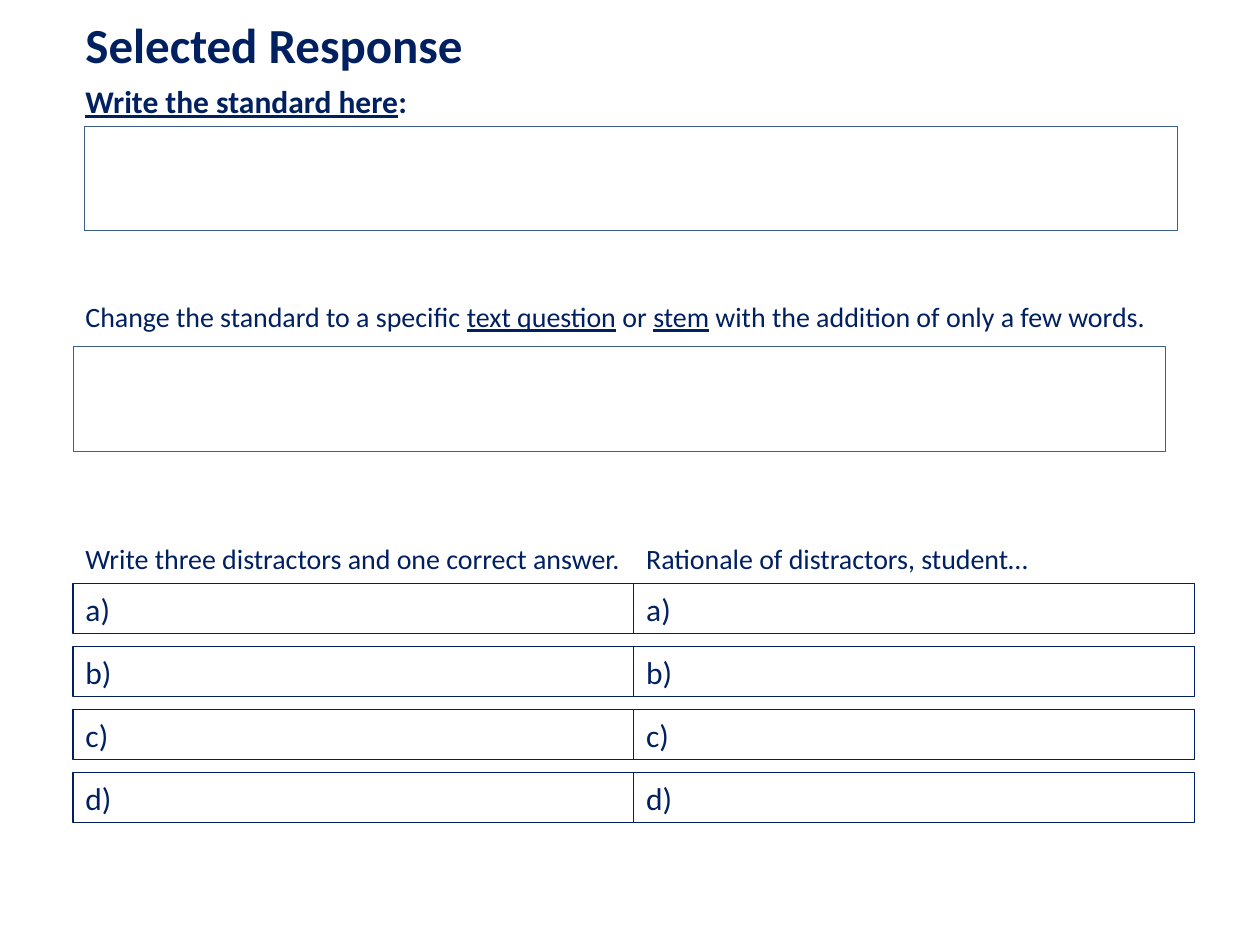
from dataclasses import dataclass

from pptx import Presentation, util as u
from pptx.dml import color
from pptx.enum import dml, shapes, text


@dataclass(frozen=True)
class Theme:
    """Colours, font and type sizes of the worksheet."""
    navy: color.RGBColor = color.RGBColor(0x00, 0x20, 0x60)
    blue: color.RGBColor = color.RGBColor(0x3A, 0x5F, 0x8C)
    font: str = "Calibri"
    title: int = 28
    label: int = 18
    body: int = 16


THEME = Theme()


def write_text(shape, *parts, size=THEME.body, bold=False, underlined=()):
    """Write one left-aligned paragraph, underlining the named parts."""
    frame = shape.text_frame
    frame.word_wrap = True
    frame.vertical_anchor = text.MSO_ANCHOR.TOP
    paragraph = frame.paragraphs[0]
    paragraph.alignment = text.PP_ALIGN.LEFT
    for part in parts:
        run = paragraph.add_run()
        run.text = part
        run.font.name = THEME.font
        run.font.size = u.Pt(size)
        run.font.bold = bold
        run.font.underline = part in underlined
        run.font.color.rgb = THEME.navy


def add_label(slide, left, top, width, height, *parts, **formatting):
    """Add a text label in the given box."""
    shape = slide.shapes.add_textbox(*map(u.Inches, (left, top, width, height)))
    write_text(shape, *parts, **formatting)


def add_frame(slide, left, top, width, height, line_color, line_width, dash=None):
    """Add an unfilled outlined rectangle and return it."""
    box = map(u.Inches, (left, top, width, height))
    shape = slide.shapes.add_shape(shapes.MSO_SHAPE.RECTANGLE, *box)
    shape.shadow.inherit = False
    shape.fill.background()
    shape.line.color.rgb = line_color
    shape.line.width = u.Pt(line_width)
    if dash is not None:
        shape.line.dash_style = dash
    return shape


def add_writing_area(slide, left, top, width, height):
    """Add a blank dotted area to write in."""
    add_frame(slide, left, top, width, height, THEME.blue, 0.25, dml.MSO_LINE.ROUND_DOT)


def add_answer_column(slide, left, top, width, height, heading):
    """Add a heading above four lettered answer rows."""
    heading_height, row_height, pitch = 0.38, 0.4, (height - 0.78) / 3
    add_label(slide, left, top, width, heading_height, heading)
    for index, letter in enumerate("abcd"):
        row_top = top + heading_height + index * pitch
        row = add_frame(slide, left, row_top, width, row_height, THEME.navy, 0.75)
        write_text(row, f"{letter})", size=THEME.label)


def main():
    """Build and save the worksheet slide."""
    presentation = Presentation()
    presentation.slide_width = u.Inches(10)
    presentation.slide_height = u.Inches(7.5)
    slide = presentation.slides.add_slide(presentation.slide_layouts[6])

    left, column_width = 0.58, 4.45
    add_label(slide, left, 0.07, 4.33, 0.57, "Selected Response",
              size=THEME.title, bold=True)
    add_label(slide, left, 0.6, 8.83, 0.67, "Write the standard here", ":",
              size=THEME.label, bold=True, underlined=("Write the standard here",))
    add_writing_area(slide, 0.67, 1, 8.67, 0.83)

    add_label(slide, left, 2.33, 8.67, 0.37,
              "Change the standard to a specific ", "text question", " or ", "stem",
              " with the addition of only a few words.",
              underlined=("text question", "stem"))
    add_writing_area(slide, left, 2.75, 8.67, 0.83)

    headings = ("Write three distractors and one correct answer.",
                "Rationale of distractors, student…")
    for index, heading in enumerate(headings):
        add_answer_column(slide, left + index * column_width, 4.25,
                          column_width, 2.28, heading)

    presentation.save("out.pptx")


if __name__ == "__main__":
    main()
